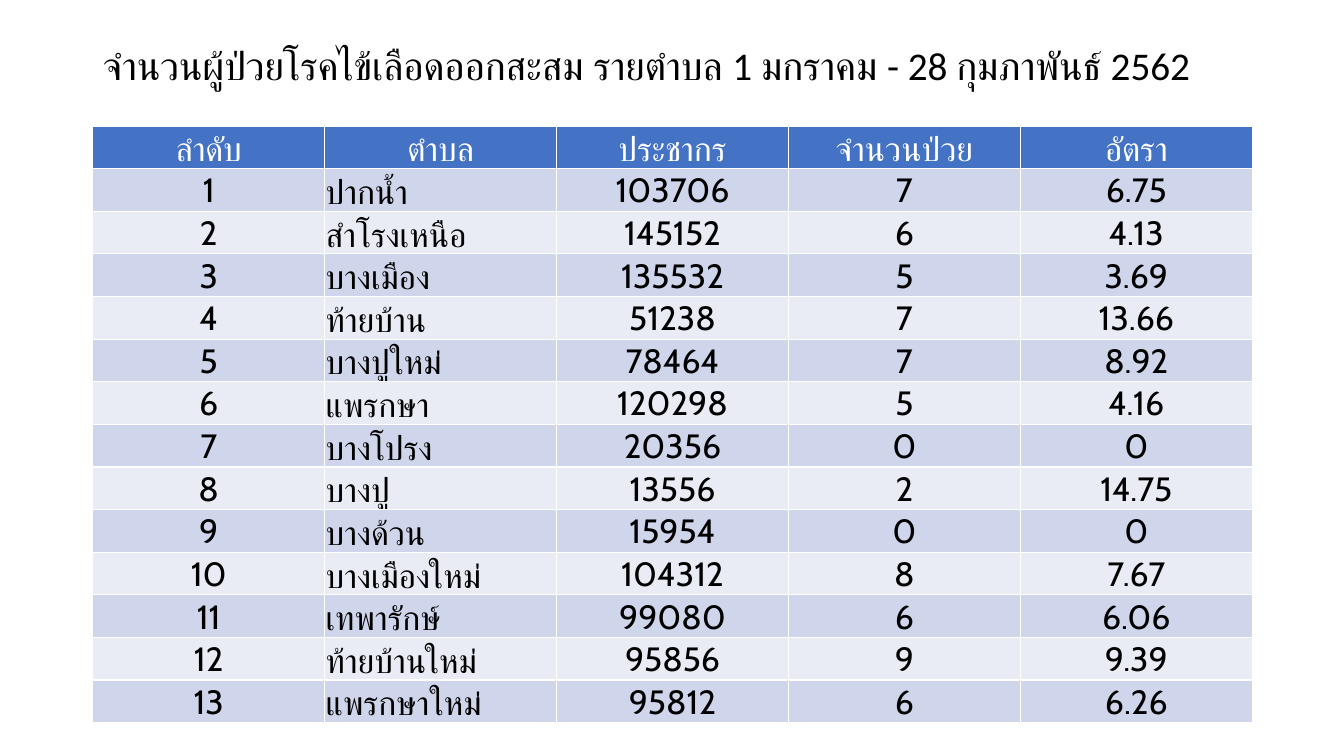
import pptx
import pptx.dml.color
import pptx.enum.text
import pptx.util

Inches = pptx.util.Inches
Align = pptx.enum.text.PP_ALIGN
Anchor = pptx.enum.text.MSO_ANCHOR

COLOURS = {
    "header": "4472C4",
    "odd": "CFD5EA",
    "even": "E9EBF5",
    "dark": "000000",
    "light": "FFFFFF",
}
TITLE = "จำนวนผู้ป่วยโรคไข้เลือดออกสะสม รายตำบล 1 มกราคม - 28 กุมภาพันธ์ 2562"
HEADINGS = ("ลำดับ", "ตำบล", "ประชากร", "จำนวนป่วย", "อัตรา")
DISTRICTS = (
    ("ปากน้ำ", "103706", "7", "6.75"),
    ("สำโรงเหนือ", "145152", "6", "4.13"),
    ("บางเมือง", "135532", "5", "3.69"),
    ("ท้ายบ้าน", "51238", "7", "13.66"),
    ("บางปูใหม่", "78464", "7", "8.92"),
    ("แพรกษา", "120298", "5", "4.16"),
    ("บางโปรง", "20356", "0", "0"),
    ("บางปู", "13556", "2", "14.75"),
    ("บางด้วน", "15954", "0", "0"),
    ("บางเมืองใหม่", "104312", "8", "7.67"),
    ("เทพารักษ์", "99080", "6", "6.06"),
    ("ท้ายบ้านใหม่", "95856", "9", "9.39"),
    ("แพรกษาใหม่", "95812", "6", "6.26"),
)


def colour(name):
    return pptx.dml.color.RGBColor.from_string(COLOURS[name])


def format_paragraph(para, font_name, size, colour_name, alignment):
    para.alignment = alignment
    para.font.name = font_name
    para.font.size = pptx.util.Pt(size)
    para.font.bold = False
    para.font.color.rgb = colour(colour_name)


def add_title(page):
    box = page.shapes.title
    box.left, box.top = Inches(0.92), Inches(0.33)
    box.width, box.height = Inches(11.5), Inches(0.69)
    frame = box.text_frame
    frame.text = TITLE
    frame.word_wrap = True
    frame.vertical_anchor = Anchor.MIDDLE
    para = frame.paragraphs[0]
    para.line_spacing = 0.9
    format_paragraph(para, "Calibri", 28, "dark", Align.LEFT)


def fill_cell(cell, text, fill_name, text_colour, alignment):
    cell.fill.solid()
    cell.fill.fore_color.rgb = colour(fill_name)
    cell.margin_left = cell.margin_right = cell.margin_top = Inches(0.01)
    cell.margin_bottom = Inches(0)
    cell.vertical_anchor = Anchor.BOTTOM
    cell.text = text
    format_paragraph(cell.text_frame.paragraphs[0], "Cabin", 24, text_colour, alignment)


def add_case_table(page):
    rows = [HEADINGS]
    rows += [(str(number), *district) for number, district in enumerate(DISTRICTS, 1)]
    frame = page.shapes.add_table(
        len(rows), len(HEADINGS), Inches(0.92), Inches(1.25), Inches(11.5), Inches(5.92)
    )
    for row_index, row in enumerate(rows):
        is_header = row_index == 0
        fill_name = "header" if is_header else "odd" if row_index % 2 else "even"
        text_colour = "light" if is_header else "dark"
        for column_index, text in enumerate(row):
            is_name = column_index == 1 and not is_header
            alignment = Align.LEFT if is_name else Align.CENTER
            cell = frame.table.cell(row_index, column_index)
            fill_cell(cell, text, fill_name, text_colour, alignment)


def main():
    """Build the slide of dengue cases by subdistrict."""
    deck = pptx.Presentation()
    deck.slide_width, deck.slide_height = Inches(13.33), Inches(7.5)
    page = deck.slides.add_slide(deck.slide_layouts[5])
    add_title(page)
    add_case_table(page)
    deck.save("out.pptx")


if __name__ == "__main__":
    main()
